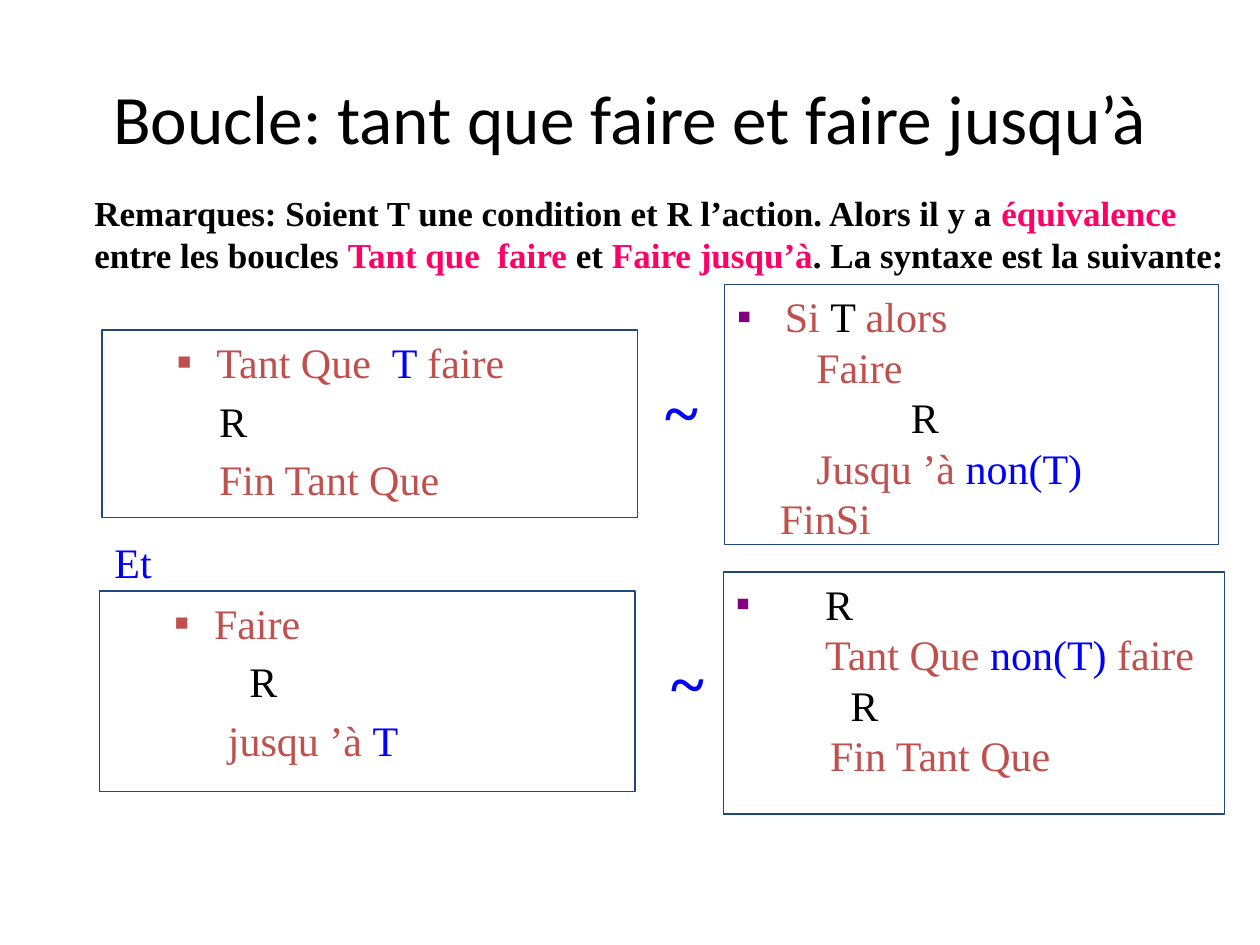
from lxml.etree import SubElement
from pptx import Presentation
from pptx.dml.color import RGBColor
from pptx.enum.shapes import MSO_SHAPE as Shape
from pptx.enum.text import MSO_ANCHOR as Anchor, PP_ALIGN as Align
from pptx.oxml.ns import qn
from pptx.util import Inches, Pt

BLACK = RGBColor(0x00, 0x00, 0x00)
RED = RGBColor(0xC0, 0x50, 0x4D)
BLUE = RGBColor(0x00, 0x00, 0xFF)
PINK = RGBColor(0xFF, 0x00, 0x66)
NAVY = RGBColor(0x1F, 0x49, 0x7D)
PURPLE = RGBColor(0x80, 0x00, 0x80)
SERIF = "Times New Roman"

# Plain texts: place, size, font, bold, alignment, wrap, runs
TEXTS = [
    ((0.5, 0.3, 9, 1.25), 39.6, "Calibri", False, Align.CENTER, True,
     [("Boucle: tant que faire et faire jusqu’à", BLACK)]),
    ((0.65, 1.47, 9.35, 0.77), 20, SERIF, True, Align.LEFT, True,
     [("Remarques: Soient T une condition et R l’action. Alors il y a ", BLACK),
      ("équivalence", PINK), (" entre les boucles ", BLACK),
      ("Tant que  faire", PINK), (" et ", BLACK), ("Faire jusqu’à", PINK),
      (". La syntaxe est la suivante:", BLACK)]),
    ((5.18, 2.91, 0.46, 0.7), 36, SERIF, True, Align.LEFT, False, [("~", BLUE)]),
    ((5.23, 5.06, 0.46, 0.7), 36, SERIF, True, Align.LEFT, False, [("~", BLUE)]),
    ((0.81, 4.21, 3.32, 0.5), 24, SERIF, False, Align.LEFT, True, [("Et", BLUE)]),
]

# Bullet styles: character, size in percent, colour, hang, space between lines
WHILE = ("■", 55, RED, 0.31, 4.8)
UNTIL = ("▪", 100, PURPLE, 0.38, 0)

# Code boxes: place, bullet style, lines as (left indent, runs)
BOXES = [
    ((0.81, 2.62, 4.25, 1.49), WHILE, [
        (0.81, [("Tant Que  ", RED), ("T ", BLUE), ("faire", RED)]),
        (0.83, [("R", BLACK)]),
        (0.83, [("Fin Tant Que", RED)])]),
    ((5.75, 2.26, 3.92, 2.06), UNTIL, [
        (0.38, [("Si ", RED), ("T ", BLACK), ("alors", RED)]),
        (0.63, [("Faire", RED)]),
        (1.38, [("R", BLACK)]),
        (0.63, [("Jusqu\u00a0’à ".replace("\u00a0", " "), RED), ("non(T)", BLUE)]),
        (0.34, [("FinSi", RED)])]),
    ((0.79, 4.69, 4.25, 1.59), WHILE, [
        (0.81, [("Faire", RED)]),
        (1.09, [("R", BLACK)]),
        (0.92, [("jusqu ’à ", RED), ("T", BLUE)])]),
    ((5.74, 4.54, 3.98, 1.92), UNTIL, [
        (0.71, [("R", BLACK)]),
        (0.71, [("Tant Que ", RED), ("non(T) ", BLUE), ("faire", RED)]),
        (0.91, [("R", BLACK)]),
        (0.75, [("Fin Tant Que", RED)])]),
]


def fill_para(para, runs, size, font, bold=False):
    para.font.size, para.font.name, para.font.bold = Pt(size), font, bold
    for text, color in runs:
        run = para.add_run()
        run.text = text
        run.font.color.rgb = color


def add_bullet(props, char, percent, color):
    tint = SubElement(SubElement(props, qn("a:buClr")), qn("a:srgbClr"))
    tint.set("val", str(color))
    SubElement(props, qn("a:buSzPct")).set("val", str(percent * 1000))
    SubElement(props, qn("a:buFont")).set("typeface", SERIF)
    SubElement(props, qn("a:buChar")).set("char", char)


def add_text(slide, place, size, font, bold, align, wrap, runs):
    frame = slide.shapes.add_textbox(*map(Inches, place)).text_frame
    frame.word_wrap = wrap
    if align == Align.CENTER:
        frame.vertical_anchor = Anchor.MIDDLE
    para = frame.paragraphs[0]
    para.alignment = align
    fill_para(para, runs, size, font, bold)


def add_box(slide, place, style, lines):
    char, percent, color, hang, gap = style
    box = slide.shapes.add_shape(Shape.RECTANGLE, *map(Inches, place))
    box.shadow.inherit = False
    box.fill.background()
    box.line.color.rgb = NAVY
    box.line.width = Pt(0.75)
    frame = box.text_frame
    frame.word_wrap = True
    frame.vertical_anchor = Anchor.TOP
    for row, (left, runs) in enumerate(lines):
        para = frame.add_paragraph() if row else frame.paragraphs[0]
        para.alignment = Align.LEFT
        props = para._p.get_or_add_pPr()
        props.set("marL", str(Inches(left)))
        if row:
            para.space_before = Pt(gap)
        else:
            # The bullet of the wide-set first line stays at the box edge
            shift = hang if style is WHILE else left
            props.set("indent", str(-Inches(shift)))
            add_bullet(props, char, percent, color)
        fill_para(para, runs, 24, SERIF)


def main():
    prs = Presentation()
    prs.slide_width, prs.slide_height = Inches(10), Inches(7.5)
    slide = prs.slides.add_slide(prs.slide_layouts[6])
    for text in TEXTS:
        add_text(slide, *text)
    for box in BOXES:
        add_box(slide, *box)
    prs.save("out.pptx")


if __name__ == "__main__":
    main()
